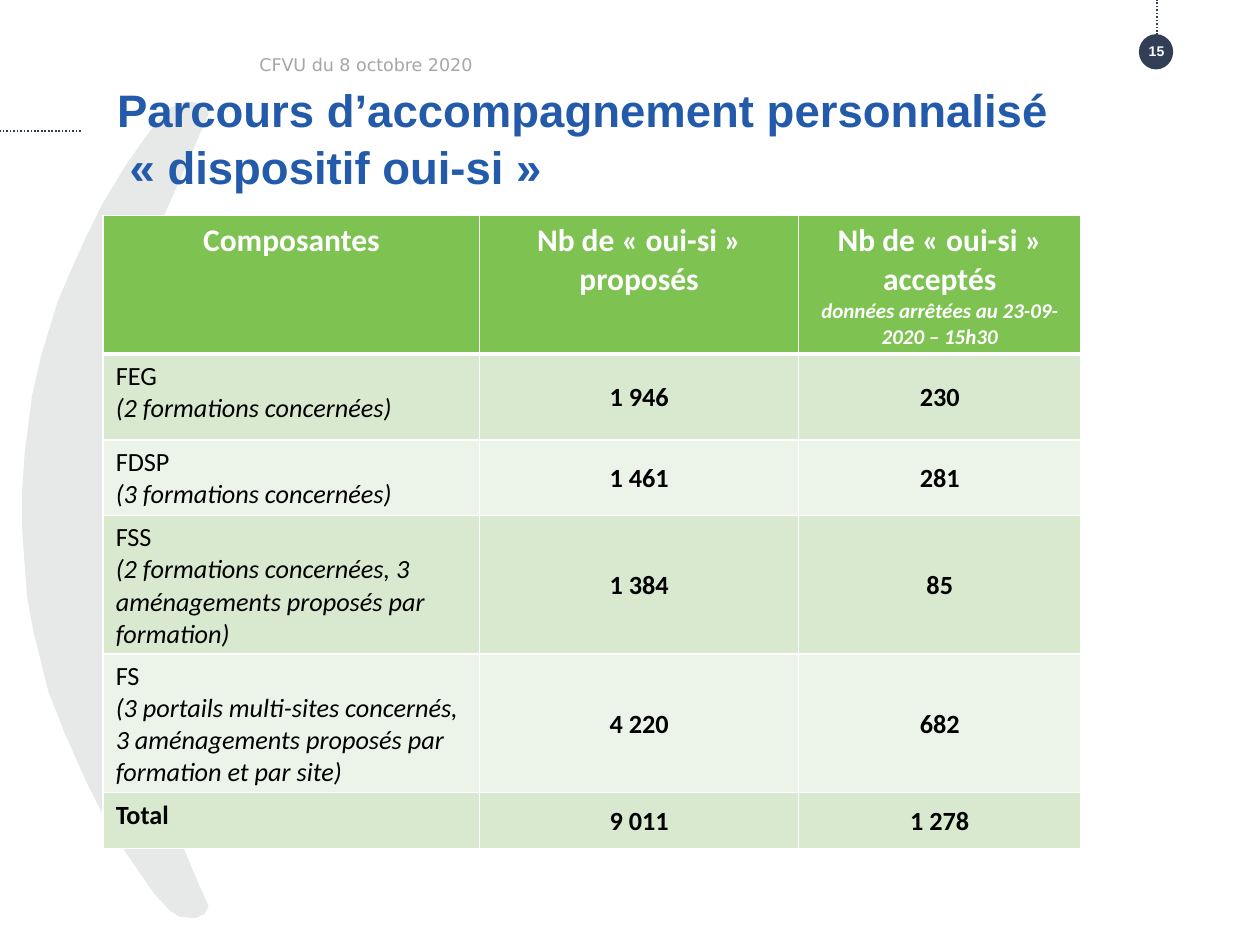
from dataclasses import dataclass

import pptx
import pptx.dml.color
import pptx.enum.dml
import pptx.enum.shapes
import pptx.enum.text
import pptx.oxml
import pptx.oxml.ns
import pptx.util

Cm = pptx.util.Cm
Pt = pptx.util.Pt
ALIGN = pptx.enum.text.PP_ALIGN
ANCHOR = pptx.enum.text.MSO_ANCHOR


@dataclass(frozen=True)
class Theme:
    title: str = "235BAA"
    navy: str = "313E56"
    crescent: str = "E7E8E8"
    white: str = "FFFFFF"
    black: str = "000000"
    muted: str = "A6A6A6"
    header: str = "7EC251"
    bands: tuple = ("D8E9D0", "ECF4E9")
    heading_font: str = "Arial"
    table_font: str = "Calibri"
    meeting_font: str = "DejaVu Sans"
    title_size: float = 26
    header_size: float = 18
    note_size: float = 12
    body_size: float = 15
    meeting_size: float = 10
    page_size: float = 8


@dataclass(frozen=True)
class Component:
    name: str
    detail: str
    proposed: str
    accepted: str


@dataclass(frozen=True)
class Box:
    left: float
    top: float
    width: float
    height: float

    def lengths(self) -> tuple:
        return Cm(self.left), Cm(self.top), Cm(self.width), Cm(self.height)


THEME = Theme()
HEADERS = (
    ("Composantes", ""),
    ("Nb de « oui-si » proposés", ""),
    ("Nb de « oui-si » acceptés", "données arrêtées au 23-09-2020 – 15h30"),
)
COMPONENTS = (
    Component("FEG", "(2 formations concernées)", "1 946", "230"),
    Component("FDSP", "(3 formations concernées)", "1 461", "281"),
    Component("FSS", "(2 formations concernées, 3 aménagements proposés par formation)",
              "1 384", "85"),
    Component("FS", "(3 portails multi-sites concernés, 3 aménagements proposés "
              "par formation et par site)", "4 220", "682"),
    Component("Total", "", "9 011", "1 278"),
)
COLUMN_WIDTHS = (7.59, 6.43, 5.69)
ROW_HEIGHTS = (2.54, 1.73, 1.42, 2.54, 2.31, 1.12)

CRESCENT_OUTER = (
    (4.19, 2.29), (4.17, 2.18), (3.94, 2.08), (3.73, 2.06), (3.45, 2.18), (3.18, 2.46),
    (2.84, 2.92), (2.51, 3.4), (2.08, 4.11), (1.75, 4.78), (1.45, 5.44), (1.17, 6.1),
    (0.84, 7.19), (0.66, 7.98), (0.51, 9.14), (0.46, 9.91), (0.46, 10.67), (0.56, 12.04),
    (0.69, 12.73), (0.99, 13.94), (1.32, 14.78), (1.75, 15.75), (2.11, 16.46),
    (2.51, 17.12), (2.87, 17.65), (3.12, 18.01), (3.45, 18.36), (3.63, 18.47),
    (3.84, 18.49), (3.94, 18.49), (4.11, 18.42), (4.19, 18.26),
)
CRESCENT_INNER = (
    (4.01, 17.86), (3.71, 17.15), (3.35, 16.28), (3.05, 15.49), (2.79, 14.73),
    (2.59, 14), (2.39, 13.06), (2.21, 11.94), (2.13, 11.05), (2.11, 10.29), (2.13, 9.53),
    (2.21, 8.48), (2.36, 7.62), (2.62, 6.4), (2.92, 5.38), (3.25, 4.45), (3.61, 3.63),
    (3.94, 2.87), (4.17, 2.36),
)


def rgb(color: str) -> pptx.dml.color.RGBColor:
    return pptx.dml.color.RGBColor.from_string(color)


def write(paragraph, text: str, *, size: float, font: str, color: str,
          bold: bool = False, italic: bool = False, align=ALIGN.LEFT) -> None:
    """Fill a paragraph with formatted text; a newline becomes a line break."""
    paragraph.alignment = align
    for index, line in enumerate(text.split("\n")):
        if index:
            paragraph.add_line_break()
        run = paragraph.add_run()
        run.text = line
        run.font.size, run.font.name = Pt(size), font
        run.font.bold, run.font.italic = bold, italic
        run.font.color.rgb = rgb(color)


def add_text(slide, box: Box, text: str, *, anchor=ANCHOR.MIDDLE, inset=None, **style):
    frame = slide.shapes.add_textbox(*box.lengths()).text_frame
    frame.word_wrap = True
    frame.vertical_anchor = anchor
    if inset is not None:
        frame.margin_left = frame.margin_right = Cm(inset)
        frame.margin_top = frame.margin_bottom = Cm(inset)
    write(frame.paragraphs[0], text, **style)
    return frame


def add_crescent(slide) -> None:
    start, *rest = [(Cm(x), Cm(y)) for x, y in CRESCENT_OUTER + CRESCENT_INNER]
    builder = slide.shapes.build_freeform(*start)
    builder.add_line_segments(rest, close=True)
    crescent = builder.convert_to_shape()
    crescent.shadow.inherit = False
    crescent.fill.solid()
    crescent.fill.fore_color.rgb = rgb(THEME.crescent)
    crescent.line.color.rgb = rgb(THEME.crescent)
    crescent.line.width = Pt(0.75)


def add_dotted_line(slide, start: tuple, end: tuple) -> None:
    line = slide.shapes.add_connector(
        pptx.enum.shapes.MSO_CONNECTOR.STRAIGHT, *(Cm(value) for value in start + end))
    line.line.color.rgb = rgb(THEME.navy)
    line.line.width = Pt(1)
    line.line.dash_style = pptx.enum.dml.MSO_LINE.ROUND_DOT
    properties = line._element.spPr
    properties.append(properties.makeelement(pptx.oxml.ns.qn("a:effectLst"), {}))


def add_page_marker(slide) -> None:
    disc = slide.shapes.add_shape(
        pptx.enum.shapes.MSO_SHAPE.OVAL, *Box(22.96, 0.69, 0.69, 0.71).lengths())
    disc.shadow.inherit = False
    disc.fill.solid()
    disc.fill.fore_color.rgb = rgb(THEME.navy)
    disc.line.fill.background()
    add_dotted_line(slide, (23.32, 0.71), (23.32, 0))
    add_text(slide, Box(22.68, 0.84, 1.27, 0.38), "15", size=THEME.page_size,
             font=THEME.heading_font, color=THEME.white, bold=True, align=ALIGN.CENTER)


def paint_cell(cell, color: str, top: float = 1, bottom: float = 1) -> None:
    """Fill a cell and give it white borders, with widths in points."""
    cell.fill.solid()
    cell.fill.fore_color.rgb = rgb(color)
    properties = cell._tc.get_or_add_tcPr()
    for index, (side, width) in enumerate(
            (("lnL", 1), ("lnR", 1), ("lnT", top), ("lnB", bottom))):
        properties.insert(index, pptx.oxml.parse_xml(
            f'<a:{side} {pptx.oxml.ns.nsdecls("a")} w="{Pt(width)}"><a:solidFill>'
            f'<a:srgbClr val="{THEME.white}"/></a:solidFill></a:{side}>'))


def write_header(cell, heading: str, note: str) -> None:
    style = dict(font=THEME.table_font, color=THEME.white, bold=True, align=ALIGN.CENTER)
    frame = cell.text_frame
    write(frame.paragraphs[0], heading, size=THEME.header_size, **style)
    if note:
        write(frame.add_paragraph(), note, size=THEME.note_size, italic=True, **style)


def write_component(cells: list, component: Component) -> None:
    style = dict(size=THEME.body_size, font=THEME.table_font, color=THEME.black)
    label, *counts = cells
    frame = label.text_frame
    write(frame.paragraphs[0], component.name, bold=not component.detail, **style)
    if component.detail:
        write(frame.add_paragraph(), component.detail, italic=True, **style)
    for cell, count in zip(counts, (component.proposed, component.accepted)):
        cell.vertical_anchor = ANCHOR.MIDDLE
        cell.margin_left = cell.margin_right = cell.margin_top = Cm(0.03)
        cell.margin_bottom = Cm(0)
        write(cell.text_frame.paragraphs[0], count, bold=True, align=ALIGN.CENTER, **style)


def add_components_table(slide) -> None:
    box = Box(2.08, 4.34, sum(COLUMN_WIDTHS), sum(ROW_HEIGHTS))
    table = slide.shapes.add_table(
        len(ROW_HEIGHTS), len(COLUMN_WIDTHS), *box.lengths()).table
    for column, width in zip(table.columns, COLUMN_WIDTHS):
        column.width = Cm(width)
    for row, height in zip(table.rows, ROW_HEIGHTS):
        row.height = Cm(height)
    header_row, *component_rows = table.rows
    for cell, (heading, note) in zip(header_row.cells, HEADERS):
        paint_cell(cell, THEME.header, bottom=3)
        write_header(cell, heading, note)
    for index, (row, component) in enumerate(zip(component_rows, COMPONENTS)):
        cells = list(row.cells)
        for cell in cells:
            paint_cell(cell, THEME.bands[index % 2], top=1 if index else 3)
        write_component(cells, component)


def main() -> None:
    presentation = pptx.Presentation()
    presentation.slide_width, presentation.slide_height = Cm(25.4), Cm(19.05)
    slide = presentation.slides.add_slide(presentation.slide_layouts[6])
    add_crescent(slide)
    add_page_marker(slide)
    add_dotted_line(slide, (1.63, 2.64), (0, 2.64))
    title = add_text(
        slide, Box(2.36, 1.6, 22.86, 1.78),
        "Parcours d’accompagnement personnalisé\n « dispositif oui-si »",
        anchor=ANCHOR.TOP, inset=0, size=THEME.title_size, font=THEME.heading_font,
        color=THEME.title, bold=True)
    title.paragraphs[0].line_spacing = 1.05
    add_components_table(slide)
    add_text(slide, Box(4.98, 0.74, 16.81, 1.12), "CFVU du 8 octobre 2020",
             size=THEME.meeting_size, font=THEME.meeting_font, color=THEME.muted)
    presentation.save("out.pptx")


if __name__ == "__main__":
    main()
